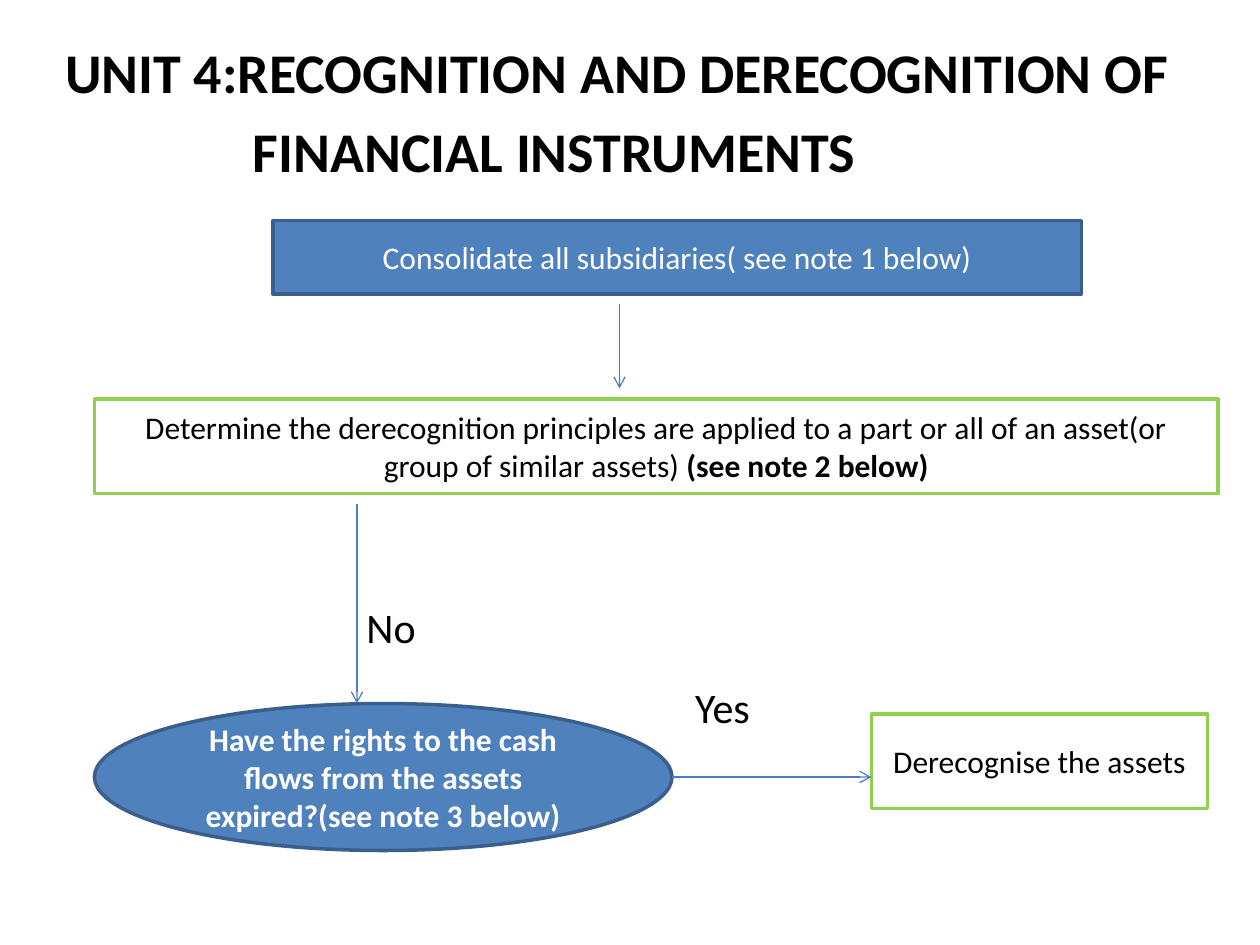
from dataclasses import dataclass
from lxml import etree
from pptx import Presentation
from pptx.dml.color import RGBColor
from pptx.enum.shapes import MSO_CONNECTOR, MSO_SHAPE
from pptx.enum.text import MSO_ANCHOR, PP_ALIGN
from pptx.oxml.ns import qn
from pptx.util import Inches, Pt

RECT, OVAL = MSO_SHAPE.RECTANGLE, MSO_SHAPE.OVAL
STRAIGHT = MSO_CONNECTOR.STRAIGHT
MIDDLE, CENTER = MSO_ANCHOR.MIDDLE, PP_ALIGN.CENTER
LEFT = PP_ALIGN.LEFT

WIDTH, HEIGHT = Inches(10), Inches(7.5)
CELL = WIDTH / 120  # the slide is a grid of 120 columns by 90 rows
FONT = "Calibri"
COLORS = {
    "blue": "4F81BD", "blue_edge": "3A5F8C", "arrow": "4B7EBC",
    "green": "92D050", "white": "FFFFFF", "black": "000000",
}
STYLES = {  # fill, edge, text
    "solid": ("blue", "blue_edge", "white"),
    "outline": ("white", "green", "black"),
}


@dataclass
class Run:
    text: str
    bold: bool = False


@dataclass
class Node:
    kind: int
    style: str
    box: tuple  # column, row, columns, rows
    runs: list


@dataclass
class Label:
    text: str
    box: tuple
    size: int = 24
    bold: bool = False


@dataclass
class Arrow:
    start: tuple  # column, row
    end: tuple


NODES = [
    Node(RECT, "solid", (26, 21, 77, 7),
         [Run("Consolidate all subsidiaries( see note 1 below)")]),
    Node(RECT, "outline", (9, 38, 107, 9),
         [Run("Determine the derecognition principles are applied to a part "
              "or all of an asset(or group of similar assets) "),
          Run("(see note 2 below)", True)]),
    Node(OVAL, "solid", (9, 67, 55, 14),
         [Run("Have the rights to the cash flows from the assets "
              "expired?(see note 3 below)", True)]),
    Node(RECT, "outline", (83, 68, 32, 9), [Run("Derecognise the assets")]),
]
LABELS = [
    Label("No", (34.9, 57.3, 8, 5)),
    Label("Yes", (66.2, 64.9, 8, 5)),
]
TITLE = [  # text, indent in columns
    ("UNIT 4:RECOGNITION AND DERECOGNITION OF", 0),
    ("FINANCIAL INSTRUMENTS", 17.9),
]
ARROWS = [
    Arrow((59, 29), (59, 37)),
    Arrow((34, 48), (34, 67)),
    Arrow((64, 74), (83, 74)),
]


def grid(values: tuple) -> list:
    return [round(v * CELL) for v in values]


def rgb(name: str) -> RGBColor:
    return RGBColor.from_string(COLORS[name])


def add_run(p, run: Run, size: int, color: str) -> None:
    r = p.add_run()
    r.text = run.text
    for key, value in {"name": FONT, "size": Pt(size), "bold": run.bold}.items():
        setattr(r.font, key, value)
    r.font.color.rgb = rgb(color)


def add_node(s, node: Node) -> None:
    fill, edge, color = STYLES[node.style]
    sp = s.shapes.add_shape(node.kind, *grid(node.box))
    sp.shadow.inherit = False
    sp.fill.solid()
    sp.fill.fore_color.rgb = rgb(fill)
    sp.line.color.rgb = rgb(edge)
    sp.line.width = Pt(2)
    tf = sp.text_frame
    tf.word_wrap = True
    tf.vertical_anchor = MIDDLE
    p = tf.paragraphs[0]
    p.alignment = CENTER
    for run in node.runs:
        add_run(p, run, 18, color)


def add_frame(s, box: tuple):
    """Add a wrapping text box without margins."""
    tf = s.shapes.add_textbox(*grid(box)).text_frame
    for key in ("margin_left", "margin_right", "margin_top", "margin_bottom"):
        setattr(tf, key, 0)
    tf.word_wrap = True
    return tf


def add_label(s, label: Label) -> None:
    p = add_frame(s, label.box).paragraphs[0]
    p.alignment = LEFT
    add_run(p, Run(label.text, label.bold), label.size, "black")


def add_title(s) -> None:
    tf = add_frame(s, (6.2, 3.6, 108, 15))
    for i, (text, indent) in enumerate(TITLE):
        p = tf.add_paragraph() if i else tf.paragraphs[0]
        p.space_before = Pt(6.4 if i else 0)
        p._p.get_or_add_pPr().set("marL", str(round(indent * CELL)))
        add_run(p, Run(text, True), 32, "black")


def add_arrow(s, arrow: Arrow) -> None:
    sp = s.shapes.add_connector(STRAIGHT, *grid(arrow.start + arrow.end))
    sp.line.color.rgb = rgb("arrow")
    sp.line.width = Pt(0.75)
    etree.SubElement(sp.line._get_or_add_ln(), qn("a:tailEnd"), type="arrow")
    etree.SubElement(sp._element.spPr, qn("a:effectLst"))


def main() -> None:
    prs = Presentation()
    prs.slide_width, prs.slide_height = WIDTH, HEIGHT
    s = prs.slides.add_slide(prs.slide_layouts[6])

    # Heading
    add_title(s)
    # Flowchart steps, answers and arrows
    for node in NODES:
        add_node(s, node)
    for label in LABELS:
        add_label(s, label)
    for arrow in ARROWS:
        add_arrow(s, arrow)

    prs.save("out.pptx")


if __name__ == "__main__":
    main()
